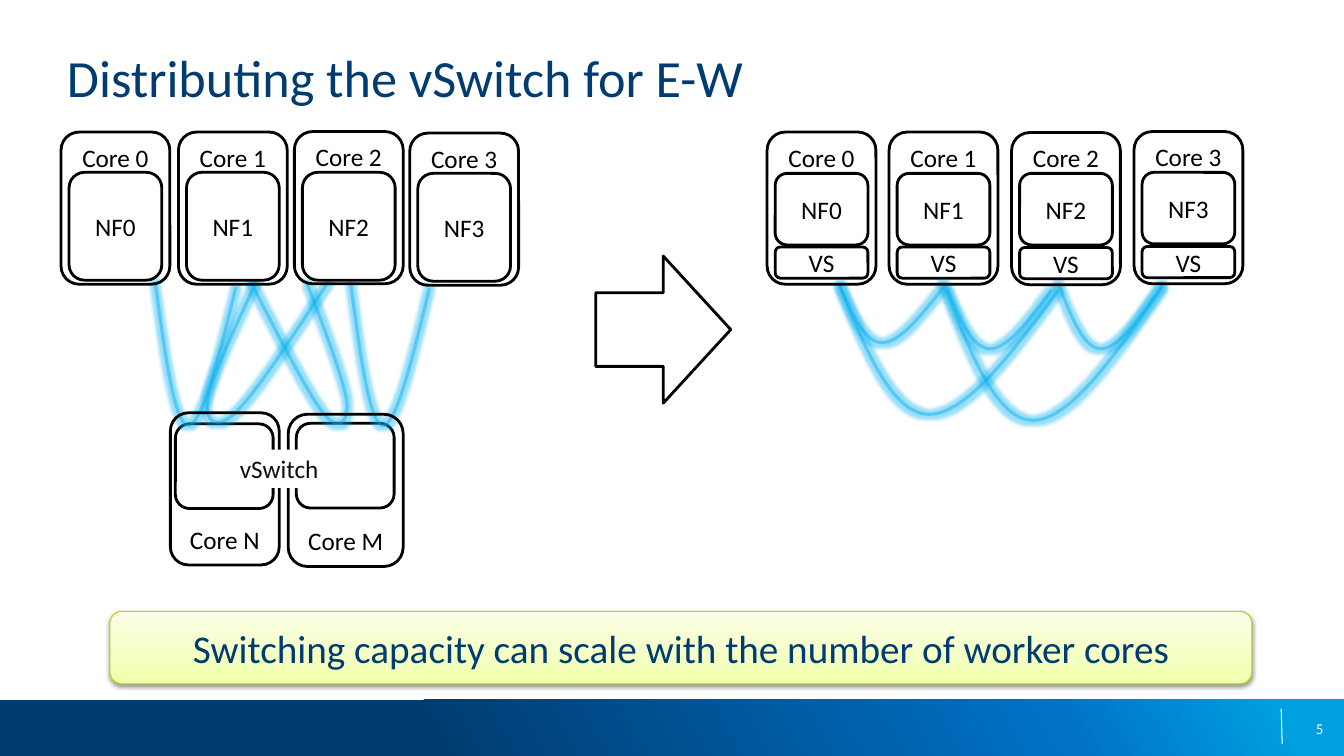
from dataclasses import dataclass
from typing import Any, NamedTuple

import lxml.etree
import pptx
import pptx.dml.color
import pptx.enum.shapes
import pptx.enum.text
import pptx.oxml.ns
import pptx.util

SHAPE = pptx.enum.shapes.MSO_SHAPE
ANCHOR = pptx.enum.text.MSO_ANCHOR
ALIGN = pptx.enum.text.PP_ALIGN
qn = pptx.oxml.ns.qn


@dataclass(frozen=True)
class Theme:
    font: str = "Calibri"
    navy: str = "003C71"
    blue: str = "0071C5"
    sky: str = "009FDF"
    flow: str = "00AEEF"
    lime: str = "BFD100"
    black: str = "000000"
    label: str = "0D0D0D"
    white: str = "FFFFFF"
    banner: tuple = ((0, "F0FFA9"), (35, "F4FFC2"), (100, "FBFFE8"))
    title_size: float = 37.3
    banner_size: float = 28
    body_size: float = 18
    number_size: float = 10.7
    outline: float = 2
    flow_width: float = 2.25
    hairline: float = 0.75


class Box(NamedTuple):
    col: float
    row: float
    cols: float
    rows: float


class Point(NamedTuple):
    col: float
    row: float


class Flow(NamedTuple):
    start: Point
    end: Point
    bottom: float


class Core(NamedTuple):
    number: int
    col: float
    row: float
    function_row: float
    switch_row: float | None = None


T = Theme()
COLS, ROWS = 133.33, 75
CORE_COLS, CORE_ROWS = 10.8, 15.1
FUNCTION_COLS = 9.2
CORES = [
    Core(0, 6.05, 13.1, 17.1),
    Core(1, 17.7, 13.1, 17.1),
    Core(2, 29.2, 13.05, 17.1),
    Core(3, 40.65, 13.2, 17.2),
    Core(0, 76.1, 13.1, 17.2, 24.5),
    Core(1, 88.2, 13.1, 17.2, 24.5),
    Core(2, 100.35, 13.15, 17.2, 24.55),
    Core(3, 112.5, 13.05, 17.1, 24.45),
]
FLOWS = [
    Flow(Point(15.4, 28), Point(23.4, 28.5), 42.2),
    Flow(Point(34.8, 28.2), Point(42.6, 28.6), 42.2),
    Flow(Point(83.3, 28.3), Point(93.6, 28.5), 34),
    Flow(Point(105, 28.1), Point(115.3, 28.3), 34.6),
    Flow(Point(94, 28.7), Point(104.3, 28.8), 34.6),
    Flow(Point(83.3, 28.4), Point(105, 28.8), 41.1),
    Flow(Point(93.6, 28.1), Point(115.3, 28.5), 41.7),
]
HOOKS = [
    [Point(25.4, 28), Point(23.2, 32.8), Point(20.9, 37.6), Point(20.6, 39.7),
     Point(20.3, 41.9), Point(21.5, 42.8), Point(23.5, 40.8),
     Point(25.5, 38.8), Point(29.1, 33.3), Point(32.6, 27.9)],
    [Point(30.5, 28.2), Point(32.3, 32.9), Point(34.1, 37.7), Point(34.4, 39.8),
     Point(34.6, 42), Point(33.6, 42.9), Point(32, 40.9),
     Point(30.5, 38.9), Point(27.7, 33.5), Point(24.9, 28)],
]


def grid(n: float) -> int:
    return pptx.util.Inches(n / 10)


def rgb(color: str) -> Any:
    return pptx.dml.color.RGBColor.from_string(color)


def add_color(parent: Any, color: str, alpha: float = 100) -> None:
    c = lxml.etree.SubElement(parent, qn("a:srgbClr"), val=color)
    if alpha < 100:
        lxml.etree.SubElement(c, qn("a:alpha"), val=str(int(alpha * 1000)))


def add_effect(sp: Any, tag: str, color: str, alpha: float, **attrs: str) -> None:
    effects = sp._element.spPr.find(qn("a:effectLst"))
    add_color(lxml.etree.SubElement(effects, qn(tag), **attrs), color, alpha)


def set_gradient(sp: Any, stops: tuple, angle: float) -> None:
    sp.fill.gradient()
    sp.fill.gradient_angle = angle
    stop_list = next(sp._element.spPr.iter(qn("a:gsLst")))
    for gs in list(stop_list):
        stop_list.remove(gs)
    for position, color in stops:
        add_color(lxml.etree.SubElement(stop_list, qn("a:gs"), pos=str(position * 1000)), color)


def write(sp: Any, text: str, *, size: float = T.body_size, color: str = T.black,
          align: Any = ALIGN.CENTER, anchor: Any = ANCHOR.MIDDLE,
          inset: float | None = None) -> None:
    tf = sp.text_frame
    tf.word_wrap, tf.vertical_anchor = True, anchor
    if inset is not None:
        tf.margin_left = tf.margin_right = tf.margin_top = tf.margin_bottom = grid(inset)
    p = tf.paragraphs[0]
    p.alignment = align
    r = p.add_run()
    r.text = text
    r.font.name, r.font.size, r.font.color.rgb = T.font, pptx.util.Pt(size), rgb(color)


def add_box(s: Any, box: Box, kind: Any = SHAPE.ROUNDED_RECTANGLE, fill: str | None = T.white,
            line: str | None = T.black, width: float = T.outline) -> Any:
    sp = s.shapes.add_shape(kind, *map(grid, box))
    sp.shadow.inherit = False
    if fill:
        sp.fill.solid()
        sp.fill.fore_color.rgb = rgb(fill)
    else:
        sp.fill.background()
    if line:
        sp.line.color.rgb, sp.line.width = rgb(line), pptx.util.Pt(width)
    else:
        sp.line.fill.background()
    return sp


def add_text(s: Any, box: Box, text: str, **fmt: Any) -> None:
    write(s.shapes.add_textbox(*map(grid, box)), text, **fmt)


def add_core(s: Any, core: Core) -> None:
    split = core.switch_row is not None
    inner = core.col + (CORE_COLS - FUNCTION_COLS) / 2
    write(add_box(s, Box(inner, core.function_row, FUNCTION_COLS, 7.1 if split else 10.7)),
          f"NF{core.number}")
    write(add_box(s, Box(core.col, core.row, CORE_COLS, CORE_ROWS), fill=None),
          f"Core {core.number}", anchor=ANCHOR.TOP)
    if split:
        write(add_box(s, Box(inner, core.switch_row, FUNCTION_COLS, 3.1)), "VS")


def flow_points(flow: Flow) -> list[Point]:
    a, b, bottom = flow
    shares = (0, 0.12, 0.24, 0.41, 0.58, 0.79, 1)
    rows = (a.row, (a.row + bottom) / 2, bottom, bottom, bottom, (b.row + bottom) / 2, b.row)
    return [Point(a.col + share * (b.col - a.col), row) for share, row in zip(shares, rows)]


def add_curve(s: Any, points: list[Point]) -> None:
    start, *rest = [(grid(p.col), grid(p.row)) for p in points]
    fb = s.shapes.build_freeform(*start)
    fb.add_line_segments(rest, close=False)
    sp = fb.convert_to_shape()
    lines = list(sp._element.spPr.iter(qn("a:lnTo")))
    for i in range(0, len(lines), 3):
        cubic = lxml.etree.Element(qn("a:cubicBezTo"))
        lines[i].addprevious(cubic)
        for line in lines[i:i + 3]:
            cubic.append(line[0])
            line.getparent().remove(line)
    sp.shadow.inherit = False
    sp.fill.background()
    sp.line.color.rgb, sp.line.width = rgb(T.flow), pptx.util.Pt(T.flow_width)
    color = next(sp._element.spPr.iter(qn("a:srgbClr")))
    lxml.etree.SubElement(color, qn("a:alpha"), val="44000")
    add_effect(sp, "a:glow", T.flow, 40, rad=str(pptx.util.Pt(5)))


def add_footer(s: Any) -> None:
    bar = add_box(s, Box(0, 69.4, COLS, 5.6), SHAPE.RECTANGLE, line=None)
    set_gradient(bar, ((32, T.navy), (78, T.blue), (95, T.sky)), 29)
    rule = s.shapes.add_connector(pptx.enum.shapes.MSO_CONNECTOR.STRAIGHT,
                                  *map(grid, (127.1, 70.3, 127.2, 73.8)))
    rule.line.color.rgb, rule.line.width = rgb(T.white), pptx.util.Pt(T.hairline)
    lxml.etree.SubElement(rule._element.spPr, qn("a:effectLst"))


def add_banner(s: Any) -> None:
    sp = add_box(s, Box(10.9, 60.65, 113.3, 7.2), line=T.lime, width=T.hairline)
    set_gradient(sp, T.banner, 90)
    add_effect(sp, "a:outerShdw", T.black, 38, blurRad=str(pptx.util.Pt(3.1)),
               dist=str(pptx.util.Pt(1.6)), dir="5400000", rotWithShape="0")
    write(sp, "Switching capacity can scale with the number of worker cores",
          size=T.banner_size, color=T.navy)


def main() -> None:
    prs = pptx.Presentation()
    prs.slide_width, prs.slide_height = grid(COLS), grid(ROWS)
    s = prs.slides.add_slide(prs.slide_layouts[6])
    add_footer(s)
    add_banner(s)
    add_text(s, Box(6.65, 4.5, 120, 7.8), "Distributing the vSwitch for E-W", size=T.title_size,
             color=T.navy, align=ALIGN.LEFT, anchor=ANCHOR.TOP, inset=0)
    for col, row in ((29.4, 42), (17.4, 42.05)):
        add_box(s, Box(col, row, 9.7, 8.4))
    for points in [flow_points(flow) for flow in FLOWS] + HOOKS:
        add_curve(s, points)
    add_box(s, Box(59.1, 25.4, 13.4, 14.6), SHAPE.RIGHT_ARROW)
    add_text(s, Box(100.2, 70.3, 31.1, 4), "5", size=T.number_size, color=T.white,
             align=ALIGN.RIGHT, inset=0)
    for core in CORES:
        add_core(s, core)
    for name, box in (("Core N", Box(16.9, 40.95, CORE_COLS, CORE_ROWS)),
                      ("Core M", Box(28.6, 41.1, 11.4, CORE_ROWS))):
        write(add_box(s, box, fill=None), name, anchor=ANCHOR.BOTTOM)
    write(add_box(s, Box(23.4, 44.6, 9.7, 3.8), SHAPE.RECTANGLE, line=None), "vSwitch",
          color=T.label, align=ALIGN.LEFT, anchor=ANCHOR.TOP, inset=0.4)
    prs.save("out.pptx")


if __name__ == "__main__":
    main()
